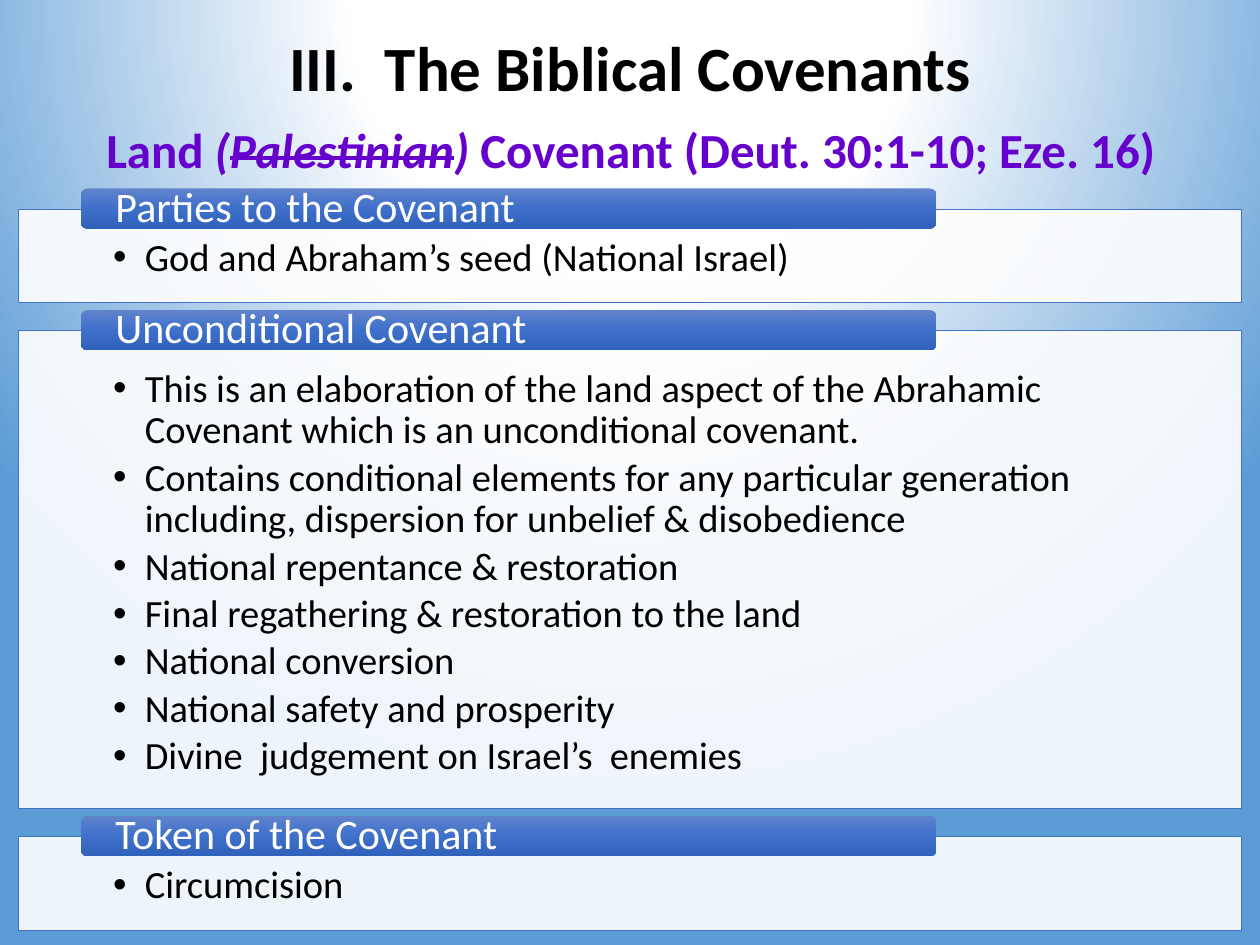
from lxml.etree import SubElement
from pptx import Presentation
from pptx.dml.color import RGBColor
from pptx.enum.shapes import MSO_SHAPE as SHAPE
from pptx.enum.text import MSO_ANCHOR as ANCHOR, MSO_AUTO_SIZE as AUTO, PP_ALIGN as ALIGN
from pptx.oxml import parse_xml
from pptx.oxml.ns import nsdecls, qn
from pptx.util import Cm, Pt

BLACK = RGBColor(0x00, 0x00, 0x00)
WHITE = RGBColor(0xFF, 0xFF, 0xFF)
PURPLE = RGBColor(0x66, 0x00, 0xCC)
SKY = RGBColor(0x5B, 0x9B, 0xD5)
BORDER = RGBColor(0x44, 0x72, 0xC4)
BAR_TOP = RGBColor(0x61, 0x83, 0xCB)
BAR_MIDDLE = RGBColor(0x3E, 0x70, 0xCA)
BAR_BOTTOM = RGBColor(0x30, 0x62, 0xBB)

PANEL_GAP = 0.57
BAR_RISE = 0.42
SECTIONS = [
    ("Parties to the Covenant", 1.88, ["God and Abraham’s seed (National Israel)"]),
    ("Unconditional Covenant", 9.63, [
        "This is an elaboration of the land aspect of the Abrahamic Covenant which is an unconditional covenant.",
        "Contains conditional elements for any particular generation including, dispersion for unbelief & disobedience",
        "National repentance & restoration",
        "Final regathering & restoration to the land",
        "National conversion",
        "National safety and prosperity",
        "Divine  judgement on Israel’s  enemies",
    ]),
    ("Token of the Covenant", 1.88, ["Circumcision"]),
]


def set_gradient(props, stops, shade):
    gs = "".join(f'<a:gs pos="{pos * 1000}"><a:srgbClr val="{color}"/></a:gs>' for pos, color in stops)
    grad = parse_xml(f'<a:gradFill {nsdecls("a")} rotWithShape="1"><a:gsLst>{gs}</a:gsLst>{shade}</a:gradFill>')
    props.replace(props.find(qn("a:noFill")), grad)


def add_run(p, text, size, color, bold=False):
    r = p.add_run()
    r.text = text
    r.font.name = "Calibri"
    r.font.size = Pt(size)
    r.font.bold = bold
    r.font.color.rgb = color
    return r


prs = Presentation()
prs.slide_width, prs.slide_height = Cm(25.4), Cm(19.05)
s = prs.slides.add_slide(prs.slide_layouts[1])
s.background.fill.background()
set_gradient(
    s.element.find(".//" + qn("p:bgPr")),
    [(0, WHITE), (35, WHITE), (100, SKY)],
    '<a:path path="circle"><a:fillToRect l="50000" t="-80000" r="50000" b="180000"/></a:path>',
)

title, body = s.placeholders
title.left, title.top, title.width, title.height = Cm(3.18), Cm(0.56), Cm(19.05), Cm(1.73)
tf = title.text_frame
tf.auto_size = AUTO.NONE
tf.vertical_anchor = ANCHOR.MIDDLE
p = tf.paragraphs[0]
pPr = p._p.get_or_add_pPr()
pPr.set("marL", str(Cm(1.93)))
pPr.set("indent", str(Cm(-1.93)))
SubElement(pPr, qn("a:buFont"), typeface="+mj-lt")
SubElement(pPr, qn("a:buAutoNum"), type="romanUcPeriod", startAt="3")
p.alignment = ALIGN.CENTER
p.line_spacing = 0.9
add_run(p, "The Biblical Covenants", 36, BLACK, True)

top = 4.22
for heading, height, points in SECTIONS:
    box = Cm(0.38), Cm(top), Cm(24.64), Cm(height)
    if len(points) > 1:
        sp = body
        sp.left, sp.top, sp.width, sp.height = box
    else:
        sp = s.shapes.add_shape(SHAPE.RECTANGLE, *box)
        sp.shadow.inherit = False
    sp.fill.solid()
    sp.fill.fore_color.rgb = WHITE
    white = sp.element.spPr.find(qn("a:solidFill")).find(qn("a:srgbClr"))
    SubElement(white, qn("a:alpha"), val="90000")
    sp.line.color.rgb = BORDER
    sp.line.width = Pt(0.5)
    tf = sp.text_frame
    tf.word_wrap = True
    tf.auto_size = AUTO.NONE
    tf.vertical_anchor = ANCHOR.MIDDLE if sp is body else ANCHOR.TOP
    tf.margin_left = tf.margin_right = Cm(1.9)
    tf.margin_top, tf.margin_bottom = Cm(0.58), Cm(0.43)
    for i, point in enumerate(points):
        p = tf.add_paragraph() if i else tf.paragraphs[0]
        pPr = p._p.get_or_add_pPr()
        pPr.set("marL", str(Cm(0.64)))
        pPr.set("indent", str(Cm(-0.64)))
        SubElement(pPr, qn("a:buFont"), typeface="Arial")
        SubElement(pPr, qn("a:buChar"), char="•")
        p.alignment = ALIGN.LEFT
        p.line_spacing = 0.9
        p.space_before = Pt(0)
        p.space_after = Pt(3.3)
        add_run(p, point, 22, BLACK)

    bar = s.shapes.add_shape(SHAPE.ROUNDED_RECTANGLE, Cm(1.63), Cm(top - BAR_RISE), Cm(17.25), Cm(0.81))
    bar.shadow.inherit = False
    bar.line.fill.background()
    bar.fill.background()
    set_gradient(
        bar.element.spPr,
        [(0, BAR_TOP), (50, BAR_MIDDLE), (100, BAR_BOTTOM)],
        '<a:lin ang="5400000" scaled="0"/>',
    )
    tf = bar.text_frame
    tf.word_wrap = True
    tf.vertical_anchor = ANCHOR.MIDDLE
    tf.margin_left = tf.margin_right = Cm(0.66)
    tf.margin_top = tf.margin_bottom = 0
    p = tf.paragraphs[0]
    p.alignment = ALIGN.LEFT
    p.line_spacing = 0.9
    add_run(p, heading, 24, WHITE)
    top += height + PANEL_GAP

subtitle = s.shapes.add_textbox(Cm(1.73), Cm(2.29), Cm(21.97), Cm(1.45))
tf = subtitle.text_frame
tf.word_wrap = True
p = tf.paragraphs[0]
p.alignment = ALIGN.CENTER
add_run(p, "Land ", 28, PURPLE, True)
add_run(p, "(", 28, PURPLE, True).font.italic = True
r = add_run(p, "Palestinian", 28, PURPLE, True)
r.font.italic = True
r.font._element.set("strike", "sngStrike")
add_run(p, ") ", 28, PURPLE, True).font.italic = True
add_run(p, "Covenant (Deut. 30:1-10; Eze. 16)", 28, PURPLE, True)

prs.save("out.pptx")
